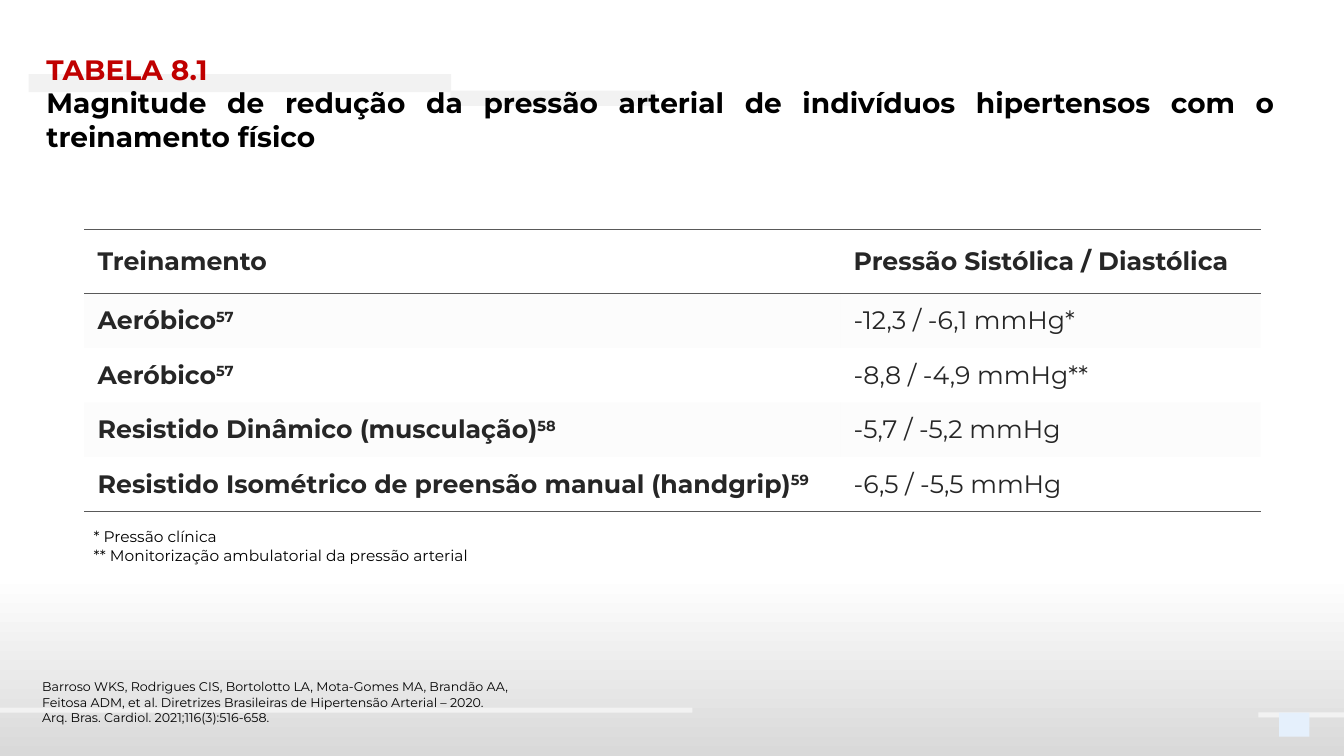
from typing import NamedTuple

from pptx import Presentation
from pptx.dml.color import RGBColor
from pptx.enum.shapes import MSO_SHAPE
from pptx.enum.text import MSO_ANCHOR as Anchor, MSO_AUTO_SIZE as AutoSize, PP_ALIGN as Align
from pptx.oxml import parse_xml
from pptx.oxml.ns import nsdecls, qn
from pptx.util import Pt

FONT = "Montserrat"
BLACK, INK, RED, RULE, PALE = "000000", "262626", "C00000", "595959", "F2F2F2"
NO_STYLE = "{2D5ABB26-0587-4C30-8999-92F81FD0307C}"


class Box(NamedTuple):
    left: float
    top: float
    width: float
    height: float


class Bar(NamedTuple):
    box: Box
    color: str


class Line(NamedTuple):
    text: str
    color: str = BLACK
    bold: bool = False


class Note(NamedTuple):
    box: Box
    size: float
    align: Align
    lines: list[Line]


class Training(NamedTuple):
    name: str
    ref: str
    pressure: str


BARS = [
    Bar(Box(20.5, 52.9, 301.7, 13), PALE),
    Bar(Box(321.8, 64.8, 146.2, 10.8), PALE),
    Bar(Box(0, 505.4, 494.6, 3.6), PALE),
    Bar(Box(898.8, 508.9, 61.2, 3.6), PALE),
    Bar(Box(913.7, 509, 21.6, 17.3), "E5F0FC"),
]
TITLE = Note(Box(25.9, 33.8, 892.1, 79.9), 20, Align.JUSTIFY, [
    Line("TABELA 8.1", RED, True),
    Line("Magnitude de redução da pressão arterial de indivíduos hipertensos "
         "com o treinamento físico", BLACK, True),
])
NOTES = [
    Note(Box(59.8, 373, 480, 33.8), 11, Align.JUSTIFY, [
        Line("* Pressão clínica"),
        Line("** Monitorização ambulatorial da pressão arterial"),
    ]),
    Note(Box(23, 481.7, 481.7, 40.3), 9, Align.LEFT, [
        Line("Barroso WKS, Rodrigues CIS, Bortolotto LA, Mota-Gomes MA, Brandão AA,"),
        Line("Feitosa ADM, et al. Diretrizes Brasileiras de Hipertensão Arterial – 2020."),
        Line("Arq. Bras. Cardiol. 2021;116(3):516-658."),
    ]),
]
TRAININGS = [
    Training("Treinamento", "", "Pressão Sistólica / Diastólica"),
    Training("Aeróbico", "57", "-12,3 / -6,1 mmHg*"),
    Training("Aeróbico", "57", "-8,8 / -4,9 mmHg**"),
    Training("Resistido Dinâmico (musculação)", "58", "-5,7 / -5,2 mmHg"),
    Training("Resistido Isométrico de preensão manual (handgrip)", "59", "-6,5 / -5,5 mmHg"),
]
TABLE_BOX = Box(60, 163.9, 840.5, 201.6)
COL_WIDTHS = [540, 300.5]
HEADER_H, ROW_H = 45.6, 39


def rgb(color: str) -> RGBColor:
    return RGBColor.from_string(color)


def pts(box: Box) -> list[Pt]:
    return [Pt(v) for v in box]


def apply(target, values: dict) -> None:
    for name, value in values.items():
        setattr(target, name, value)


def add_run(p, text: str, size: float, color: str, bold: bool):
    r = p.add_run()
    r.text = text
    apply(r.font, {"name": FONT, "size": Pt(size), "bold": bold})
    r.font.color.rgb = rgb(color)
    return r


def add_rect(s, box: Box):
    sp = s.shapes.add_shape(MSO_SHAPE.RECTANGLE, *pts(box))
    sp.shadow.inherit = False
    sp.line.fill.background()
    return sp


def fill_text(sp, note: Note) -> None:
    names = ("left", "top", "width", "height")
    apply(sp, dict(zip(names, pts(note.box))))
    tf = sp.text_frame
    apply(tf, {"word_wrap": True, "auto_size": AutoSize.SHAPE_TO_FIT_TEXT,
               "vertical_anchor": Anchor.TOP})
    for i, line in enumerate(note.lines):
        p = tf.add_paragraph() if i else tf.paragraphs[0]
        p.alignment = note.align
        add_run(p, line.text, note.size, line.color, line.bold)


def add_border(cell, sides: list[str]) -> None:
    tc_pr = cell._tc.get_or_add_tcPr()
    for i, side in enumerate(sides):
        tc_pr.insert(i, parse_xml(
            f'<a:{side} {nsdecls("a")} w="12700"><a:solidFill>'
            f'<a:srgbClr val="{RULE}"/></a:solidFill></a:{side}>'))


def shade(cell) -> None:
    cell.fill.solid()
    cell.fill.fore_color.rgb = rgb(PALE)
    color = cell._tc.tcPr.find(".//" + qn("a:srgbClr"))
    color.append(parse_xml(f'<a:alpha {nsdecls("a")} val="20000"/>'))


def add_training_table(s) -> None:
    table = s.shapes.add_table(len(TRAININGS), len(COL_WIDTHS), *pts(TABLE_BOX)).table
    apply(table, {"first_row": False, "horz_banding": False})
    table._tbl.tblPr.find(qn("a:tableStyleId")).text = NO_STYLE
    for col, width in zip(table.columns, COL_WIDTHS):
        col.width = Pt(width)
    for i, training in enumerate(TRAININGS):
        table.rows[i].height = Pt(ROW_H if i else HEADER_H)
        for j, text in enumerate((training.name, training.pressure)):
            cell = table.cell(i, j)
            apply(cell, {"margin_left": Pt(9.8), "margin_right": Pt(5), "margin_top": 0,
                         "margin_bottom": 0, "vertical_anchor": Anchor.MIDDLE})
            p = cell.text_frame.paragraphs[0]
            add_run(p, text, 18, INK, i == 0 or j == 0)
            if j == 0 and training.ref:
                r = add_run(p, training.ref, 18, INK, True)
                r._r.get_or_add_rPr().set("baseline", "30000")
            if i % 2:
                shade(cell)
            else:
                cell.fill.background()
            if i == 0:
                add_border(cell, ["lnT", "lnB"])
            elif i == len(TRAININGS) - 1:
                add_border(cell, ["lnB"])


def main() -> None:
    prs = Presentation()
    prs.slide_width, prs.slide_height = Pt(960), Pt(540)
    s = prs.slides.add_slide(prs.slide_layouts[5])

    # Backdrop fading to grey
    fill = add_rect(s, Box(0, 0, 960, 540)).fill
    fill.gradient()
    fill.gradient_angle = 270
    for stop, (pos, color) in zip(fill.gradient_stops, [(0.76, "FFFFFF"), (1, "D9D9D9")]):
        stop.position = pos
        stop.color.rgb = rgb(color)

    # Decorative bars
    for bar in BARS:
        sp = add_rect(s, bar.box)
        sp.fill.solid()
        sp.fill.fore_color.rgb = rgb(bar.color)

    # Title, brought in front of the backdrop
    title = s.shapes.title
    title._element.getparent().append(title._element)
    fill_text(title, TITLE)

    # Table, footnotes and reference
    add_training_table(s)
    for note in NOTES:
        fill_text(s.shapes.add_textbox(*pts(note.box)), note)

    prs.save("out.pptx")


if __name__ == "__main__":
    main()
